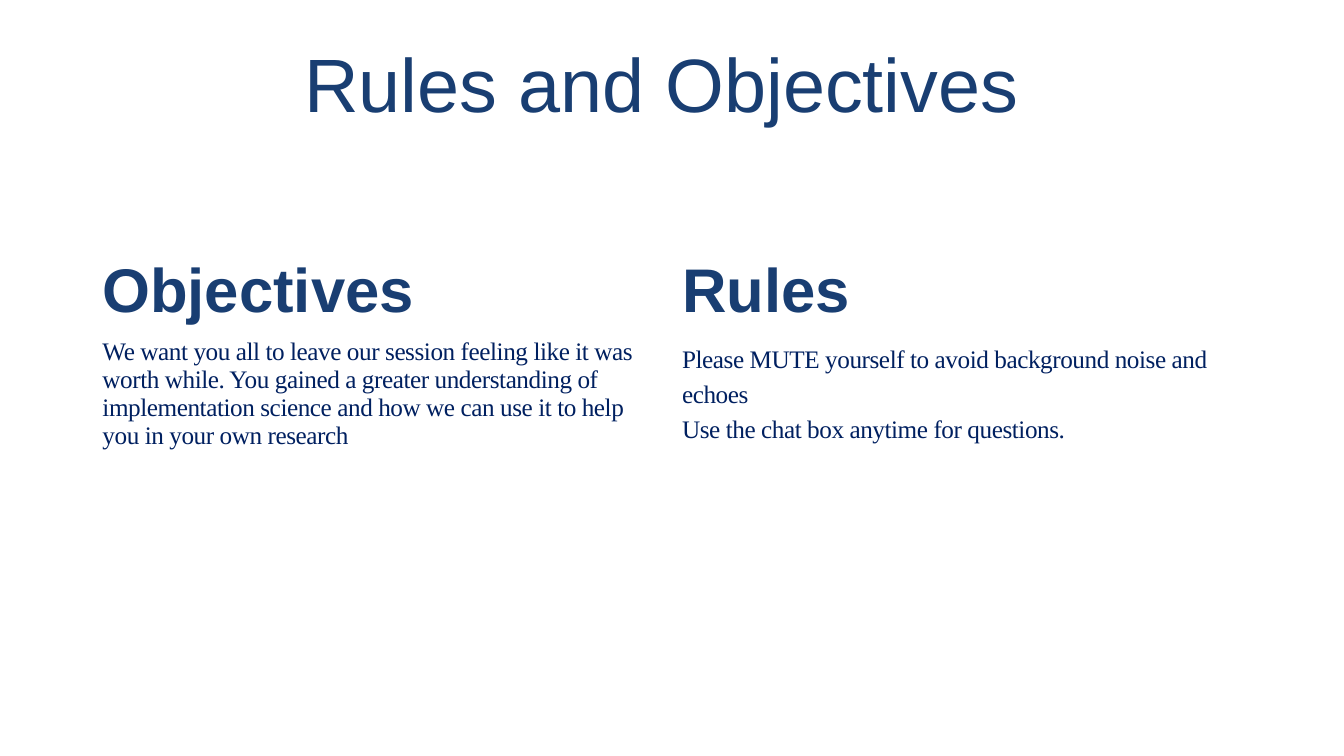
import pptx
import pptx.dml.color
import pptx.enum.text
import pptx.util

Pt = pptx.util.Pt


def tint(code):
    return pptx.dml.color.RGBColor.from_string(code)


class Page:
    """Hold the style and the current slide, and add its elements."""

    navy, ink, white = "193E72", "002060", "FFFFFF"
    sans, serif = "Arial", "Times New Roman"

    def __init__(self, deck):
        self.slide = deck.slides.add_slide(deck.slide_layouts[5])

    def run(self, para, text, size, face, color, bold=False, track=0):
        run = para.add_run()
        run.text = text
        font = run.font
        font.size, font.name, font.bold = Pt(size), face, bold
        font.color.rgb = tint(color)
        if track:
            run._r.get_or_add_rPr().set("spc", str(track))

    def title(self, text, left, top, width, height):
        shape = self.slide.shapes.title
        shape.left, shape.top = Pt(left), Pt(top)
        shape.width, shape.height = Pt(width), Pt(height)
        frame = shape.text_frame
        frame.word_wrap = True
        frame.vertical_anchor = pptx.enum.text.MSO_ANCHOR.MIDDLE
        para = frame.paragraphs[0]
        para.alignment = pptx.enum.text.PP_ALIGN.CENTER
        para.line_spacing = 0.9
        self.run(para, text, 54, self.sans, self.navy)

    def cell(self, cell, lines, lead=None, **style):
        cell.fill.solid()
        cell.fill.fore_color.rgb = tint(self.white)
        frame = cell.text_frame
        for i, line in enumerate(lines):
            para = frame.add_paragraph() if i else frame.paragraphs[0]
            if lead:
                para.line_spacing = Pt(lead)
            self.run(para, line, **style)

    def table(self, topics, left, top, width, rows):
        shape = self.slide.shapes.add_table(
            len(rows), len(topics), Pt(left), Pt(top), Pt(width), Pt(sum(rows)))
        grid = shape.table
        for row, height in zip(grid.rows, rows):
            row.height = Pt(height)
        for col, (head, lines, lead) in enumerate(topics):
            self.cell(grid.cell(0, col), [head], size=44, face=self.sans,
                      color=self.navy, bold=True)
            self.cell(grid.cell(1, col), lines, lead, size=18, face=self.serif,
                      color=self.ink, track=-30)


def main():
    deck = pptx.Presentation()
    deck.slide_width, deck.slide_height = Pt(960), Pt(540)
    page = Page(deck)
    page.title("Rules and Objectives ", 66, 28.8, 828, 68.4)
    topics = [
        ("Objectives",
         ["We want you all to leave our session feeling like it was worth while. "
          "You gained a greater understanding of implementation science and how "
          "we can use it to help you in your own research"], None),
        ("Rules",
         ["Please MUTE yourself to avoid background noise and echoes",
          "Use the chat box anytime for questions."], 25.2),
    ]
    page.table(topics, 66, 180, 828, [58, 193])
    deck.save("out.pptx")


if __name__ == "__main__":
    main()
